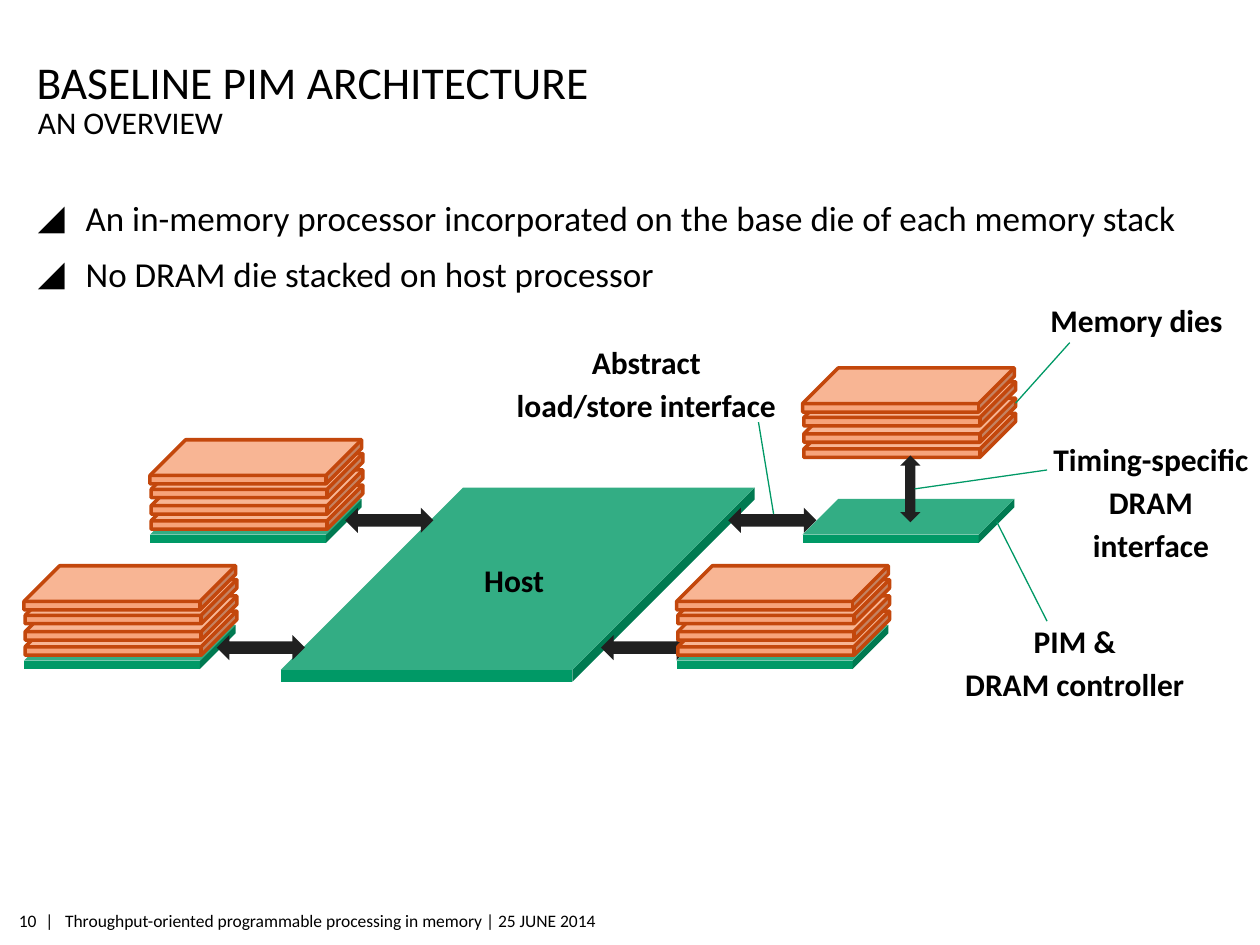
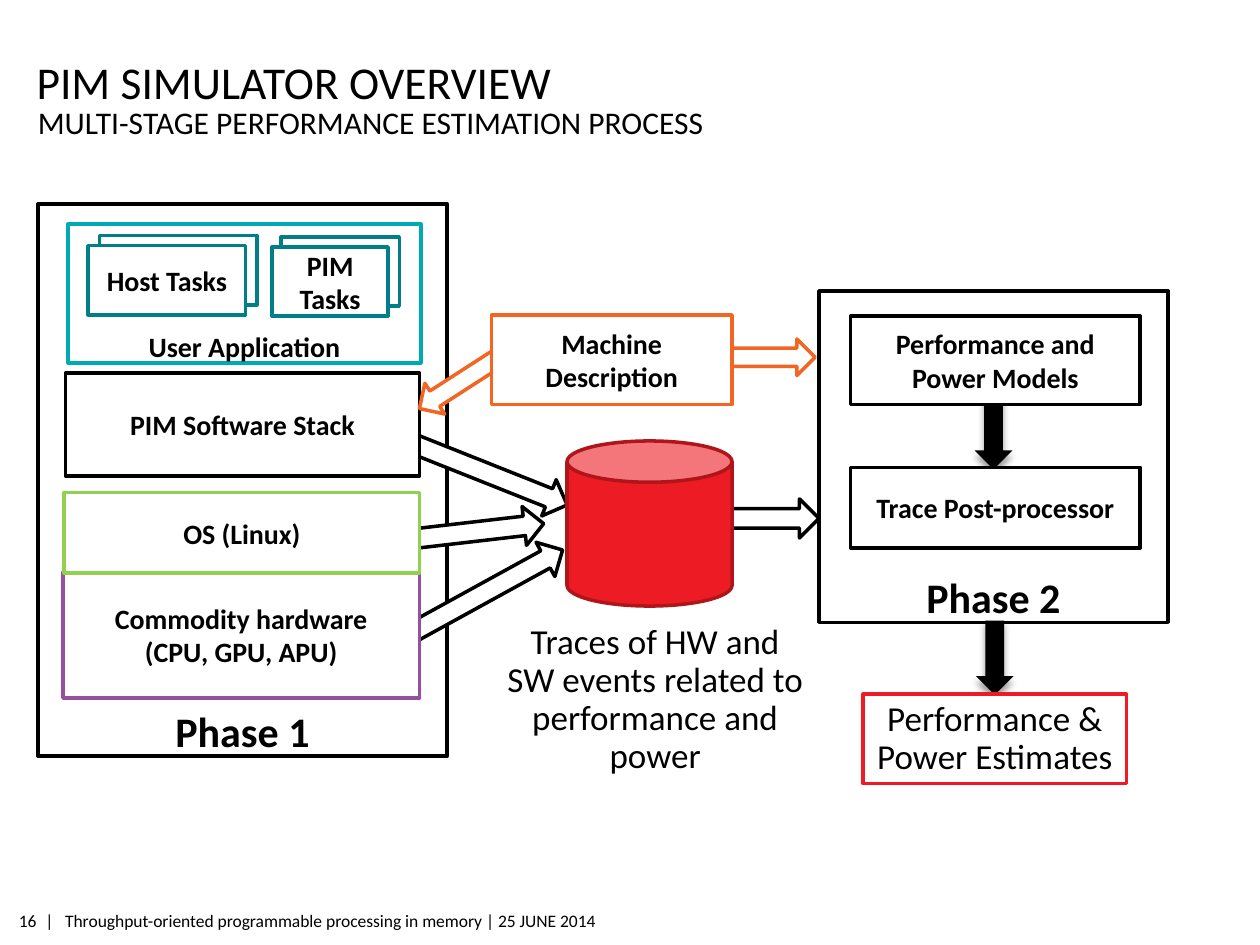
from lxml import etree
from pptx import Presentation
from pptx.dml.color import RGBColor
from pptx.enum.shapes import MSO_CONNECTOR, MSO_SHAPE as Preset
from pptx.enum.text import MSO_ANCHOR as Anchor, MSO_AUTO_SIZE, PP_ALIGN as Align
from pptx.oxml.ns import qn
from pptx.util import Inches, Pt

rgb = RGBColor.from_string
BLACK, WHITE, RED = "000000", "FFFFFF", "ED1C24"
GREEN, CHARCOAL = "009966", "202020"
DIE_FILL, DIE_EDGE = "F7A37A", "C3470C"
TEAL, ORANGE = "007F88", "F26522"
FONT = "Calibri"
FOOTER = "|   Throughput-oriented programmable processing in memory | 25 JUNE 2014"
NO_INSETS = (0, 0, 0, 0)


def write(shape, text, size=16, bold=False, align=Align.CENTER, anchor=Anchor.MIDDLE,
          insets=(0.1, 0.05, 0.1, 0.05), wrap=True, before=0, after=0, spacing=1.0,
          bullet=None):
    """Fill a shape with text, one paragraph per line."""
    frame = shape.text_frame
    frame.text = text
    frame.word_wrap = wrap
    frame.auto_size = MSO_AUTO_SIZE.NONE
    frame.vertical_anchor = anchor
    (frame.margin_left, frame.margin_top,
     frame.margin_right, frame.margin_bottom) = map(Inches, insets)
    for number, paragraph in enumerate(frame.paragraphs):
        props = paragraph._p.get_or_add_pPr()
        hanging = Inches(0.38) if bullet else 0
        props.set("marL", str(hanging))
        props.set("indent", str(-hanging))
        if bullet:
            colour = etree.SubElement(props, qn("a:buClr"))
            etree.SubElement(colour, qn("a:srgbClr"), val=BLACK)
            etree.SubElement(props, qn("a:buChar"), char=bullet)
        else:
            etree.SubElement(props, qn("a:buNone"))
        paragraph.alignment = align
        paragraph.line_spacing = spacing
        paragraph.space_before = Pt(before if number else 0)
        paragraph.space_after = Pt(after)
        for run in paragraph.runs:
            run.font.name = FONT
            run.font.size = Pt(size)
            run.font.bold = bold
            run.font.color.rgb = rgb(BLACK)


def draw(slide, preset, place, fill=WHITE, edge=None, turn=0, depth=None, shadow=False):
    """Add a preset shape with a plain fill and an optional 2 pt edge."""
    shape = slide.shapes.add_shape(preset, *map(Inches, place))
    shape.rotation = turn
    shape.fill.solid()
    shape.fill.fore_color.rgb = rgb(fill)
    if edge:
        shape.line.color.rgb = rgb(edge)
        shape.line.width = Pt(2)
    else:
        shape.line.fill.background()
    if depth:
        shape.adjustments[0] = depth
    shape.shadow.inherit = False
    if shadow:
        effects = shape.element.spPr.find(qn("a:effectLst"))
        outer = etree.SubElement(effects, qn("a:outerShdw"), blurRad=str(Pt(4)),
                                 dist=str(Pt(3)), dir="5400000", rotWithShape="0")
        tint = etree.SubElement(outer, qn("a:srgbClr"), val=BLACK)
        etree.SubElement(tint, qn("a:alpha"), val="40000")
    return shape


deck = Presentation()
deck.slide_width, deck.slide_height = Inches(10), Inches(7.5)
architecture = deck.slides.add_slide(deck.slide_layouts[3])
simulator = deck.slides.add_slide(deck.slide_layouts[1])

# Titles, subtitles and footers
for slide, page, heading, subheading in [
    (architecture, "10", "BASELINE PIM ARCHITECTURE", "AN OVERVIEW"),
    (simulator, "16", "PIM SIMULATOR OVERVIEW", "MULTI-STAGE PERFORMANCE ESTIMATION PROCESS"),
]:
    title, subtitle = slide.shapes.title, slide.placeholders[1]
    for holder, place in [(title, (0.29, 0.34, 8.4, 0.52)), (subtitle, (0.3, 0.82, 8.4, 0.31))]:
        holder.left, holder.top, holder.width, holder.height = map(Inches, place)
    write(title, heading, size=26, align=Align.LEFT, anchor=Anchor.BOTTOM,
          insets=(0, 0.05, 0, 0))
    write(subtitle, subheading, size=18, align=Align.LEFT, anchor=Anchor.TOP, insets=NO_INSETS)
    for text, left, width, align in [(FOOTER, 0.36, 4.6, Align.LEFT),
                                     (page, 0.13, 0.16, Align.RIGHT)]:
        footer = slide.shapes.add_textbox(*map(Inches, (left, 7.18, width, 0.26)))
        write(footer, text, size=10, align=align, insets=(0, 0.04, 0, 0.04), wrap=False)

# Architecture: bullet list
points = architecture.placeholders[2]
points.left, points.top, points.width, points.height = map(Inches, (0.3, 1.51, 9.4, 5.4))
write(points, "An in-memory processor incorporated on the base die of each memory stack\n"
      "No DRAM die stacked on host processor", size=20, align=Align.LEFT,
      anchor=Anchor.TOP, insets=(0, 0.05, 0, 0.05), before=8, bullet="◢")

# Architecture: host, with the link that runs behind the lower right stack
draw(architecture, Preset.CUBE, (2.23, 3.87, 3.76, 1.54), GREEN, depth=0.939)
draw(architecture, Preset.LEFT_RIGHT_ARROW, (4.77, 5.04, 0.7, 0.2), CHARCOAL)

# Architecture: memory stacks, each a base die below four memory dies
for left, base_top, gap in [(6.37, 3.96, 0.68), (1.19, 3.96, 0.11),
                            (0.19, 4.96, 0.11), (5.37, 4.96, 0.11)]:
    draw(architecture, Preset.CUBE, (left, base_top, 1.68, 0.35), GREEN, depth=0.809)
    for shift, rise in [(0.01, 0), (0.01, 0.12), (0.01, 0.25), (0, 0.36)]:
        draw(architecture, Preset.CUBE, (left + shift, base_top - gap - rise, 1.68, 0.35),
             DIE_FILL, DIE_EDGE, depth=0.809)

# Architecture: links in front of the stacks
for place, turn in [((5.78, 4.03, 0.7, 0.2), 0), ((2.74, 4.03, 0.7, 0.2), 0),
                    ((1.72, 5.04, 0.7, 0.2), 0), ((6.96, 3.8, 0.53, 0.16), 270)]:
    draw(architecture, Preset.LEFT_RIGHT_ARROW, place, CHARCOAL, turn=turn)

# Architecture: leader lines and labels
for ends in [(7.91, 4.14, 8.31, 4.93), (8.06, 3.2, 8.49, 2.72),
             (6.14, 4.08, 6.02, 3.35), (7.26, 3.88, 8.31, 3.73)]:
    leader = architecture.shapes.add_connector(MSO_CONNECTOR.STRAIGHT, *map(Inches, ends))
    leader.line.color.rgb = rgb(GREEN)
    leader.line.width = Pt(0.75)
    etree.SubElement(leader.element.spPr, qn("a:effectLst"))

for text, place in [
    ("Host", (3.74, 4.4, 0.68, 0.4)),
    ("PIM &\nDRAM controller", (7.55, 4.89, 1.96, 0.75)),
    ("Memory dies", (8.23, 2.34, 1.58, 0.4)),
    ("Abstract\nload/store interface", (3.98, 2.67, 2.3, 0.75)),
    ("Timing-specific\nDRAM\ninterface", (8.17, 3.44, 1.93, 1.09)),
]:
    label = architecture.shapes.add_textbox(*map(Inches, place))
    write(label, text, size=18, bold=True, anchor=Anchor.TOP, wrap=False, before=3)

# Simulator: frames captioned along the bottom edge
for caption, place, edge, size, side in [
    ("Phase 2", (6.5, 2.31, 2.77, 2.63), BLACK, 24, 0.25),
    ("Phase 1", (0.3, 1.62, 3.25, 4.38), BLACK, 24, 0.25),
    ("User Application", (0.54, 1.78, 2.8, 1.1), "00AAB5", 16, 0.1),
]:
    frame_box = draw(simulator, Preset.RECTANGLE, place, edge=edge)
    write(frame_box, caption, size=size, bold=True, anchor=Anchor.BOTTOM,
          insets=(side, 0.05, side, 0))

# Simulator: trace flow and downward steps, behind the boxes
for place, turn in [((3.18, 3.6, 1.37, 0.31), 21.7), ((3.18, 4.54, 1.37, 0.31), 331.2),
                    ((2.95, 4.08, 1.37, 0.31), 353.4), ((5.51, 3.96, 0.99, 0.31), 0)]:
    draw(simulator, Preset.RIGHT_ARROW, place, edge=BLACK, turn=turn)
for place in [(7.59, 3.28, 0.59, 0.3), (7.6, 5.07, 0.59, 0.3)]:
    draw(simulator, Preset.RIGHT_ARROW, place, BLACK, turn=90, shadow=True)

# Simulator: rear cards of the task piles
for place in [(0.79, 1.87, 1.25, 0.55), (2.23, 1.88, 0.94, 0.55)]:
    draw(simulator, Preset.RECTANGLE, place, edge=TEAL)

# Simulator: components
for text, place, edge in [
    ("Host Tasks", (0.7, 1.95, 1.25, 0.55), TEAL),
    ("PIM Tasks", (2.16, 1.96, 0.92, 0.55), TEAL),
    ("PIM Software Stack", (0.52, 2.96, 2.81, 0.82), BLACK),
    ("Commodity hardware\n(CPU, GPU, APU)", (0.5, 4.54, 2.83, 1), "9650A0"),
    ("OS (Linux)", (0.51, 3.91, 2.82, 0.64), "92D050"),
    ("Performance and Power Models", (6.75, 2.51, 2.3, 0.7), BLACK),
    ("Trace Post-processor", (6.75, 3.71, 2.3, 0.64), BLACK),
]:
    write(draw(simulator, Preset.RECTANGLE, place, edge=edge), text, bold=True)

# Simulator: machine description feeding both phases
for place, turn in [((3.27, 2.9, 0.73, 0.29), 147.2), ((5.74, 2.69, 0.73, 0.29), 0)]:
    draw(simulator, Preset.RIGHT_ARROW, place, edge=ORANGE, turn=turn)
machine = draw(simulator, Preset.RECTANGLE, (3.9, 2.5, 1.91, 0.71), edge=ORANGE)
write(machine, "Machine Description", bold=True)

# Simulator: trace store and final estimates
draw(simulator, Preset.CAN, (4.5, 3.5, 1.31, 1.31), RED, "AF151B")
traces = simulator.shapes.add_textbox(*map(Inches, (3.9, 4.9, 2.6, 1.31)))
estimates = draw(simulator, Preset.RECTANGLE, (6.85, 5.51, 2.09, 0.71), edge=RED)
for shape, text in [
    (traces, "Traces of HW and SW events related to performance and power"),
    (estimates, "Performance & Power Estimates"),
]:
    write(shape, text, size=20, spacing=0.9, after=3)

deck.save("out.pptx")
